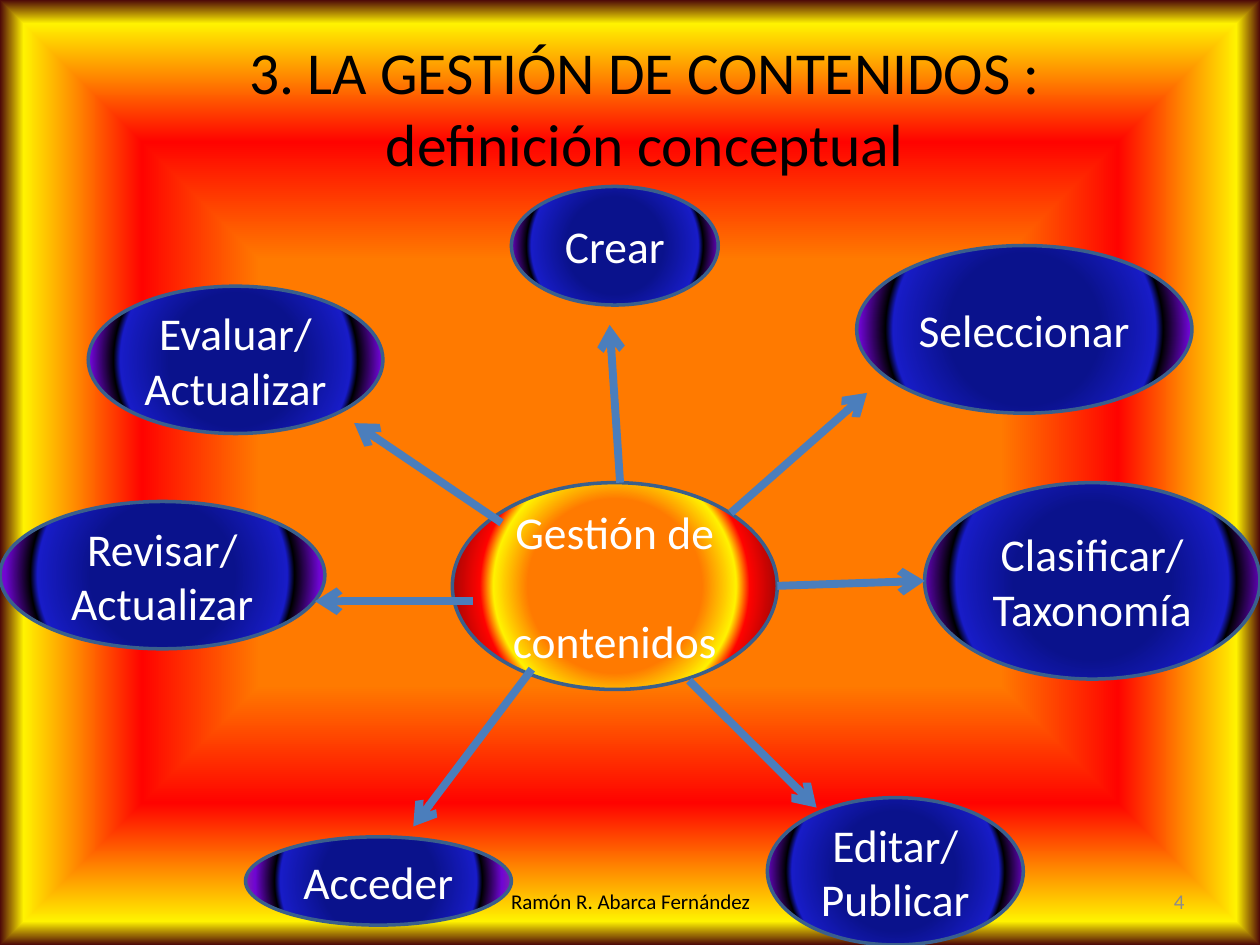
"""Build the slide on content management with its cycle of ellipses."""
from lxml.etree import SubElement
from pptx import Presentation
from pptx.dml.color import RGBColor
from pptx.enum.shapes import MSO_CONNECTOR as CONN, MSO_SHAPE as SHAPE
from pptx.enum.text import MSO_ANCHOR as ANCHOR, MSO_AUTO_SIZE as AUTO, PP_ALIGN as AL
from pptx.oxml.ns import qn
from pptx.util import Cm, Pt

FIRE = [(0, "FF7A00"), (45, "FF7A00"), (70, "FF0300"), (95, "FFF200"), (100, "4D0808")]
NIGHT = [(40, "0A128C"), (70, "181CC7"), (74, "000000"), (88, "7005D4"), (100, "8C3D91")]
EMBER = [(45, "FF7A00"), (63, "FFF200"), (70, "FF0300"), (100, "4D0808")]

STEPS = [
    ("Crear", (10.31, 3.76, 4.17, 2.39)),
    ("Seleccionar", (17.27, 4.95, 6.76, 3.38)),
    ("Clasificar/\nTaxonomía", (18.64, 9.73, 6.76, 3.96)),
    ("Editar/\nPublicar", (15.47, 16.08, 5.16, 2.97)),
    ("Acceder", (4.95, 16.87, 5.36, 1.78)),
    ("Revisar/\nActualizar", (0, 10.11, 6.55, 2.97)),
    ("Evaluar/\nActualizar", (1.78, 5.77, 5.94, 2.97)),
]
ARROWS = [
    (14.73, 10.34, 17.48, 7.92),
    (15.67, 11.81, 18.64, 11.71),
    (13.89, 13.72, 16.46, 16.28),
    (12.5, 9.73, 12.29, 6.55),
    (10.11, 10.54, 7.14, 8.53),
    (9.53, 12.12, 6.35, 12.12),
    (10.72, 13.49, 8.33, 16.66),
]


def rgb(value):
    return RGBColor.from_string(value)


def cm(values):
    return [Cm(v) for v in values]


def write(tf, text, size=26, color="FFFFFF", align=AL.CENTER, anchor=ANCHOR.MIDDLE, gap=0):
    tf.word_wrap = True
    tf.auto_size = AUTO.NONE
    tf.vertical_anchor = anchor
    for i, line in enumerate(text.split("\n")):
        p = tf.add_paragraph() if i else tf.paragraphs[0]
        p.alignment = align
        p.space_before = Pt(gap if i else 0)
        r = p.add_run()
        r.text = line
        r.font.name = "Calibri"
        r.font.size = Pt(size)
        r.font.color.rgb = rgb(color)


def shade(fill, element, stops, shape):
    fill.gradient()
    grad = next(element.iter(qn("a:gradFill")))
    for child in list(grad):
        grad.remove(child)
    stop_list = SubElement(grad, qn("a:gsLst"))
    for pos, color in stops:
        gs = SubElement(stop_list, qn("a:gs"), pos=str(pos * 1000))
        SubElement(gs, qn("a:srgbClr"), val=color)
    center = SubElement(grad, qn("a:path"))
    center.set("path", shape)
    SubElement(center, qn("a:fillToRect"), l="50000", t="50000", r="50000", b="50000")


class Deck:
    def __init__(self, border="3A5F8C", arrow="4B7EBC"):
        self.border, self.arrow_color = border, arrow
        self.prs = Presentation()
        self.prs.slide_width, self.prs.slide_height = Cm(25.4), Cm(19.05)

    def slide(self, stops):
        self.s = self.prs.slides.add_slide(self.prs.slide_layouts[5])
        shade(self.s.background.fill, self.s.element, stops, "rect")

    def title(self, text, box):
        sp = self.s.shapes.title
        sp.left, sp.top, sp.width, sp.height = cm(box)
        write(sp.text_frame, text, size=34, color="000000")

    def ellipse(self, text, box, stops, gap=0):
        sp = self.s.shapes.add_shape(SHAPE.OVAL, *cm(box))
        sp.shadow.inherit = False
        shade(sp.fill, sp.element, stops, "circle")
        sp.line.color.rgb = rgb(self.border)
        sp.line.width = Pt(2)
        tf = sp.text_frame
        tf.margin_left = tf.margin_right = 0
        write(tf, text, gap=gap)

    def arrow(self, ends):
        c = self.s.shapes.add_connector(CONN.STRAIGHT, *cm(ends))
        c.line.color.rgb = rgb(self.arrow_color)
        c.line.width = Pt(4.5)
        SubElement(c.line._get_or_add_ln(), qn("a:tailEnd"), type="arrow")
        SubElement(c.element.spPr, qn("a:effectLst"))

    def label(self, text, box, **fmt):
        sp = self.s.shapes.add_textbox(*cm(box))
        write(sp.text_frame, text, size=12, **fmt)


def main():
    deck = Deck()
    deck.slide(FIRE)
    deck.title("3. LA GESTIÓN DE CONTENIDOS : definición conceptual", (3.76, 0.58, 18.47, 3.15))
    for text, box in STEPS:
        deck.ellipse(text, box, NIGHT)
    deck.ellipse("Gestión de\ncontenidos", (9.12, 9.73, 6.55, 4.17), EMBER, gap=31)
    for ends in ARROWS:
        deck.arrow(ends)
    deck.label("4", (18.21, 17.65, 5.92, 1.02), color="8C8C8C", align=AL.RIGHT)
    deck.label("Ramón R. Abarca Fernández", (8.69, 17.65, 8.05, 1.02), color="000000")
    deck.prs.save("out.pptx")


if __name__ == "__main__":
    main()
